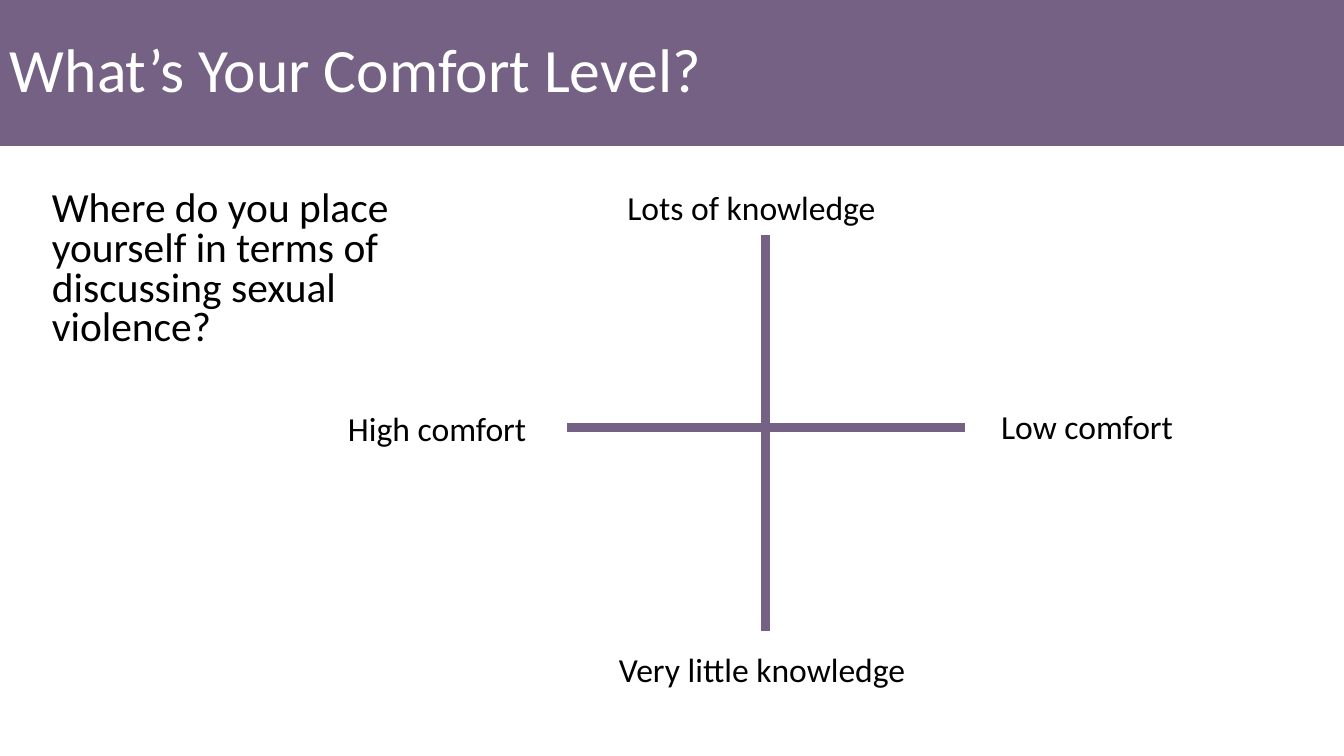
"""Build the comfort level slide: a title band, a question and a two-axis cross."""
from pptx import Presentation
from pptx.dml.color import RGBColor
from pptx.enum.shapes import MSO_CONNECTOR as Connector, MSO_SHAPE as Shape
from pptx.enum.text import MSO_ANCHOR as Anchor, PP_ALIGN as Align
from pptx.oxml.ns import qn
from pptx.util import Pt
from lxml.etree import SubElement

TITLE = "What’s Your Comfort Level?"
QUESTION = "Where do you place yourself in terms of discussing sexual violence?"
AXIS_LABELS = [
    ("High comfort", (322, 384, 204, 48), True),
    ("Low comfort", (944, 382, 184, 48), False),
    ("Very little knowledge", (580, 613, 296, 48), False),
    ("Lots of knowledge", (588, 173, 258, 48), False),
]
SLIDE_SIZE = (1280, 720)
TITLE_BOX = (0, 0, 1280, 139)
QUESTION_BOX = (40, 177, 350, 174)
CROSS_CENTER = (729, 407)
AXES = [(729, 224, 729, 601), (919, 407, 540, 407)]

PURPLE = RGBColor(0x74, 0x61, 0x83)
WHITE = RGBColor(0xFF, 0xFF, 0xFF)
BLACK = RGBColor(0x00, 0x00, 0x00)
EMU_PER_PX = 9525


def emu(lengths):
    return [length * EMU_PER_PX for length in lengths]


def write(shape, text, size, color, wrap=True, anchor=Anchor.TOP, spacing=1.0):
    frame = shape.text_frame
    frame.word_wrap = wrap
    frame.vertical_anchor = anchor
    paragraph = frame.paragraphs[0]
    paragraph.alignment = Align.LEFT
    paragraph.line_spacing = spacing
    run = paragraph.add_run()
    run.text = text
    for name, value in {"name": "Calibri", "size": Pt(size)}.items():
        setattr(run.font, name, value)
    run.font.color.rgb = color


def add_axis(slide, ends):
    axis = slide.shapes.add_connector(Connector.STRAIGHT, *emu(ends))
    axis.line.color.rgb = PURPLE
    axis.line.width = Pt(6)
    SubElement(axis._element.spPr, qn("a:effectLst"))


def main():
    presentation = Presentation()
    presentation.slide_width, presentation.slide_height = emu(SLIDE_SIZE)
    slide = presentation.slides.add_slide(presentation.slide_layouts[6])

    band = slide.shapes.add_shape(Shape.RECTANGLE, *emu(TITLE_BOX))
    band.shadow.inherit = False
    band.fill.solid()
    band.fill.fore_color.rgb = PURPLE
    band.line.fill.background()
    write(band, TITLE, 44, WHITE, anchor=Anchor.MIDDLE, spacing=0.9)

    question = slide.shapes.add_textbox(*emu(QUESTION_BOX))
    write(question, QUESTION, 29.6, BLACK, spacing=0.8)

    for ends in AXES:
        add_axis(slide, ends)
    for text, box, wrap in AXIS_LABELS:
        write(slide.shapes.add_textbox(*emu(box)), text, 24, BLACK, wrap)

    presentation.save("out.pptx")


if __name__ == "__main__":
    main()
